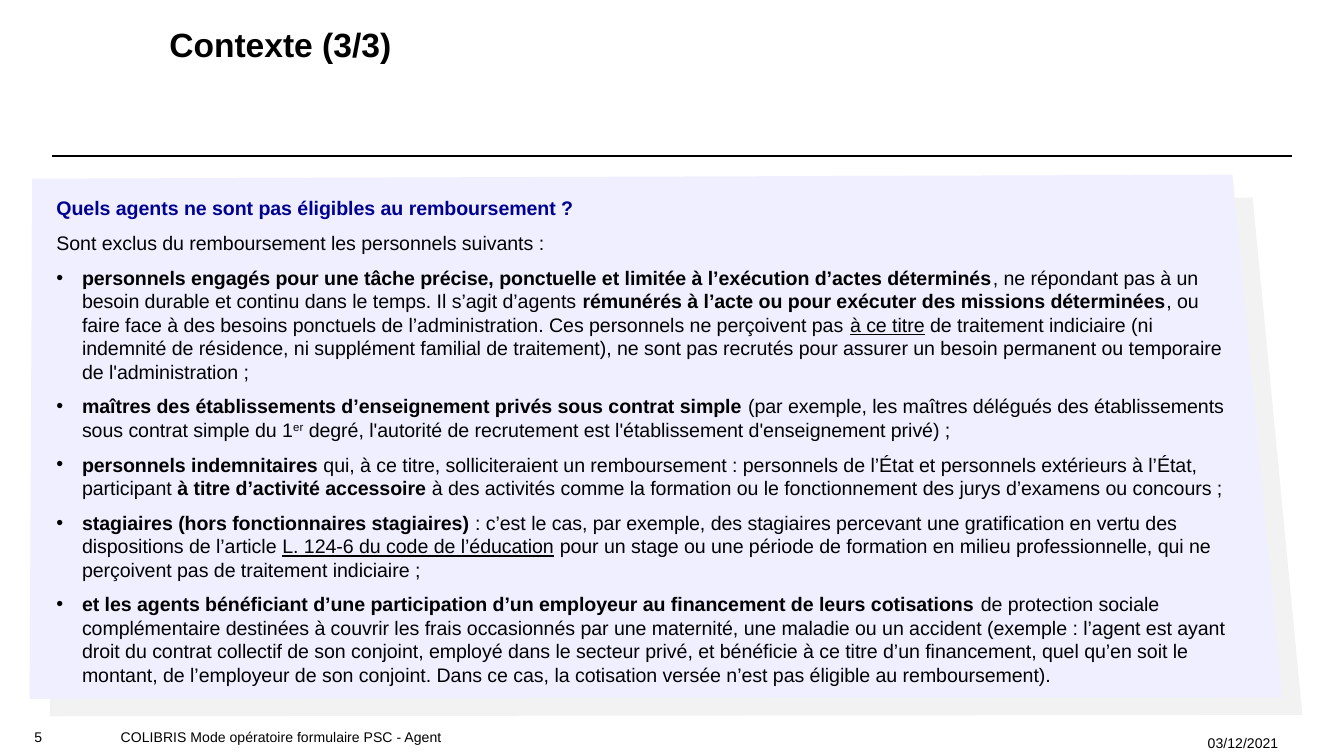
"""Build the slide listing the agents who are not eligible for reimbursement."""

from dataclasses import dataclass
from typing import NamedTuple

from lxml.etree import SubElement
from pptx import Presentation
from pptx.dml.color import RGBColor
from pptx.enum.shapes import MSO_CONNECTOR as Connector
from pptx.enum.text import MSO_ANCHOR as Anchor, MSO_AUTO_SIZE as AutoSize, PP_ALIGN as Align
from pptx.oxml.ns import qn
from pptx.util import Inches, Pt

COLORS = {"text": "000000", "heading": "000091", "panel": "EFEFFF", "panel_shadow": "F2F2F2"}
FONT = "Arial"
BULLET_INDENT = Inches(0.19)
SLIDE_WIDTH = Inches(10)
SLIDE_HEIGHT = SLIDE_WIDTH * 9 // 16


class Run(NamedTuple):
    text: str
    bold: bool = False
    underline: bool = False
    superscript: bool = False


@dataclass(frozen=True)
class Item:
    runs: tuple[Run, ...]
    bullet: bool = True
    bold: bool = False
    color: str = "text"


@dataclass(frozen=True)
class Label:
    text: str
    box: tuple[float, float, float, float]
    align: Align
    margin: float = 0.1


@dataclass(frozen=True)
class Panel:
    color: str
    corners: tuple[tuple[float, float], ...]


PANELS = (
    Panel("panel_shadow", ((0.4, 1.5), (9.32, 1.47), (9.69, 5.32), (0.37, 5.33))),
    Panel("panel", ((0.24, 1.33), (9.17, 1.3), (9.54, 5.19), (0.22, 5.2))),
)

LABELS = (
    Label("5", (0.06, 5.4, 0.45, 0.17), Align.CENTER, 0),
    Label("COLIBRIS Mode opératoire formulaire PSC - Agent", (0.8, 5.29, 6.17, 0.39), Align.LEFT),
    Label("03/12/2021", (8.33, 5.33, 1.28, 0.39), Align.RIGHT),
)

ITEMS = (
    Item(
        (Run("Quels agents ne sont pas éligibles au remboursement ?"),),
        bullet=False, bold=True, color="heading",
    ),
    Item((Run("Sont exclus du remboursement les personnels suivants :"),), bullet=False),
    Item((
        Run("personnels engagés pour une tâche précise, ponctuelle et limitée à l’exécution "
            "d’actes déterminés", bold=True),
        Run(", ne répondant pas à un besoin durable et continu dans le temps. Il s’agit d’agents "),
        Run("rémunérés à l’acte ou pour exécuter des missions déterminées", bold=True),
        Run(", ou faire face à des besoins ponctuels de l’administration. Ces personnels ne "
            "perçoivent pas "),
        Run("à ce titre", underline=True),
        Run(" de traitement indiciaire (ni indemnité de résidence, ni supplément familial de "
            "traitement), ne sont pas recrutés pour assurer un besoin permanent ou temporaire "
            "de l'administration ;"),
    )),
    Item((
        Run("maîtres des établissements d’enseignement privés sous contrat simple", bold=True),
        Run(" (par exemple, les maîtres délégués des établissements sous contrat simple du 1"),
        Run("er", superscript=True),
        Run(" degré, l'autorité de recrutement est l'établissement d'enseignement privé) ;"),
    )),
    Item((
        Run("personnels indemnitaires", bold=True),
        Run(" qui, à ce titre, solliciteraient un remboursement : personnels de l’État et "
            "personnels extérieurs à l’État, participant "),
        Run("à titre d’activité accessoire", bold=True),
        Run(" à des activités comme la formation ou le fonctionnement des jurys d’examens ou "
            "concours ;"),
    )),
    Item((
        Run("stagiaires (hors fonctionnaires stagiaires)", bold=True),
        Run(" : c’est le cas, par exemple, des stagiaires percevant une gratification en vertu "
            "des dispositions de l’article "),
        Run("L. 124-6 du code de l’éducation", underline=True),
        Run(" pour un stage ou une période de formation en milieu professionnelle, qui ne "
            "perçoivent pas de traitement indiciaire ;"),
    )),
    Item((
        Run("et les agents bénéficiant d’une participation d’un employeur au financement de "
            "leurs cotisations", bold=True),
        Run(" de protection sociale complémentaire destinées à couvrir les frais occasionnés "
            "par une maternité, une maladie ou un accident (exemple : l’agent est ayant droit "
            "du contrat collectif de son conjoint, employé dans le secteur privé, et bénéficie "
            "à ce titre d’un financement, quel qu’en soit le montant, de l’employeur de son "
            "conjoint. Dans ce cas, la cotisation versée n’est pas éligible au remboursement)."),
    )),
)


def rgb(name: str) -> RGBColor:
    """Return a palette colour."""
    return RGBColor.from_string(COLORS[name])


def set_font(paragraph, size: float, color: str = "text", bold: bool = False) -> None:
    """Set the font shared by the runs of a paragraph."""
    font = paragraph.font
    font.name, font.size, font.bold = FONT, Pt(size), bold
    font.color.rgb = rgb(color)


def place(shape, left: float, top: float, width: float, height: float) -> None:
    """Move and size a shape, in inches."""
    shape.left, shape.top = Inches(left), Inches(top)
    shape.width, shape.height = Inches(width), Inches(height)


def set_margins(frame, horizontal: float, vertical: float) -> None:
    """Set the inner margins of a text frame, in inches."""
    frame.margin_left = frame.margin_right = Inches(horizontal)
    frame.margin_top = frame.margin_bottom = Inches(vertical)


def add_panel(slide, panel: Panel) -> None:
    """Draw a slanted background panel."""
    points = [(Inches(x), Inches(y)) for x, y in panel.corners]
    builder = slide.shapes.build_freeform(*points[0])
    builder.add_line_segments(points[1:], close=True)
    shape = builder.convert_to_shape()
    shape.shadow.inherit = False
    shape.fill.solid()
    shape.fill.fore_color.rgb = rgb(panel.color)
    shape.line.fill.background()


def add_rule(slide) -> None:
    """Draw the line below the title."""
    rule = slide.shapes.add_connector(
        Connector.STRAIGHT, Inches(0.39), Inches(1.16), Inches(9.61), Inches(1.16)
    )
    rule.line.color.rgb = rgb("text")
    rule.line.width = Pt(0.8)
    SubElement(rule.element.spPr, qn("a:effectLst"))


def add_label(slide, label: Label) -> None:
    """Write a small footer label."""
    frame = slide.shapes.add_textbox(*map(Inches, label.box)).text_frame
    frame.word_wrap = True
    frame.vertical_anchor = Anchor.MIDDLE
    set_margins(frame, label.margin, label.margin / 2)
    paragraph = frame.paragraphs[0]
    paragraph.text, paragraph.alignment = label.text, label.align
    set_font(paragraph, 7.5)


def fill_title(title) -> None:
    """Place and format the title placeholder."""
    place(title, 1.26, 0.21, 8.64, 0.48)
    frame = title.text_frame
    frame.auto_size = AutoSize.NONE
    frame.vertical_anchor = Anchor.TOP
    set_margins(frame, 0, 0)
    paragraph = frame.paragraphs[0]
    paragraph.text, paragraph.alignment = "Contexte (3/3)", Align.LEFT
    paragraph.line_spacing = 0.9
    set_font(paragraph, 18, bold=True)


def write_item(paragraph, item: Item, space_before: float) -> None:
    """Write one paragraph of the body, with or without a bullet."""
    paragraph.space_before = Pt(space_before)
    properties = paragraph._p.get_or_add_pPr()
    indent = BULLET_INDENT if item.bullet else 0
    properties.set("marL", str(indent))
    properties.set("indent", str(-indent))
    if item.bullet:
        SubElement(properties, qn("a:buFont"), typeface=FONT)
        SubElement(properties, qn("a:buChar"), char="•")
    else:
        SubElement(properties, qn("a:buNone"))
    set_font(paragraph, 10.5, item.color, item.bold)
    for part in item.runs:
        run = paragraph.add_run()
        run.text = part.text
        if part.bold:
            run.font.bold = True
        if part.underline:
            run.font.underline = True
        if part.superscript:
            run._r.get_or_add_rPr().set("baseline", "30000")


def fill_body(slide, body) -> None:
    """Place the body placeholder above the panels and write its items."""
    slide.shapes.element.append(body.element)
    place(body, 0.32, 1.41, 8.97, 3.79)
    frame = body.text_frame
    frame.auto_size = AutoSize.NONE
    for index, item in enumerate(ITEMS):
        paragraph = frame.add_paragraph() if index else frame.paragraphs[0]
        write_item(paragraph, item, 6 if index else 0)


def main() -> None:
    """Build and save the presentation."""
    presentation = Presentation()
    presentation.slide_width, presentation.slide_height = SLIDE_WIDTH, SLIDE_HEIGHT
    slide = presentation.slides.add_slide(presentation.slide_layouts[1])
    fill_title(slide.shapes.title)
    add_rule(slide)
    for panel in PANELS:
        add_panel(slide, panel)
    fill_body(slide, slide.placeholders[1])
    for label in LABELS:
        add_label(slide, label)
    presentation.save("out.pptx")


if __name__ == "__main__":
    main()
